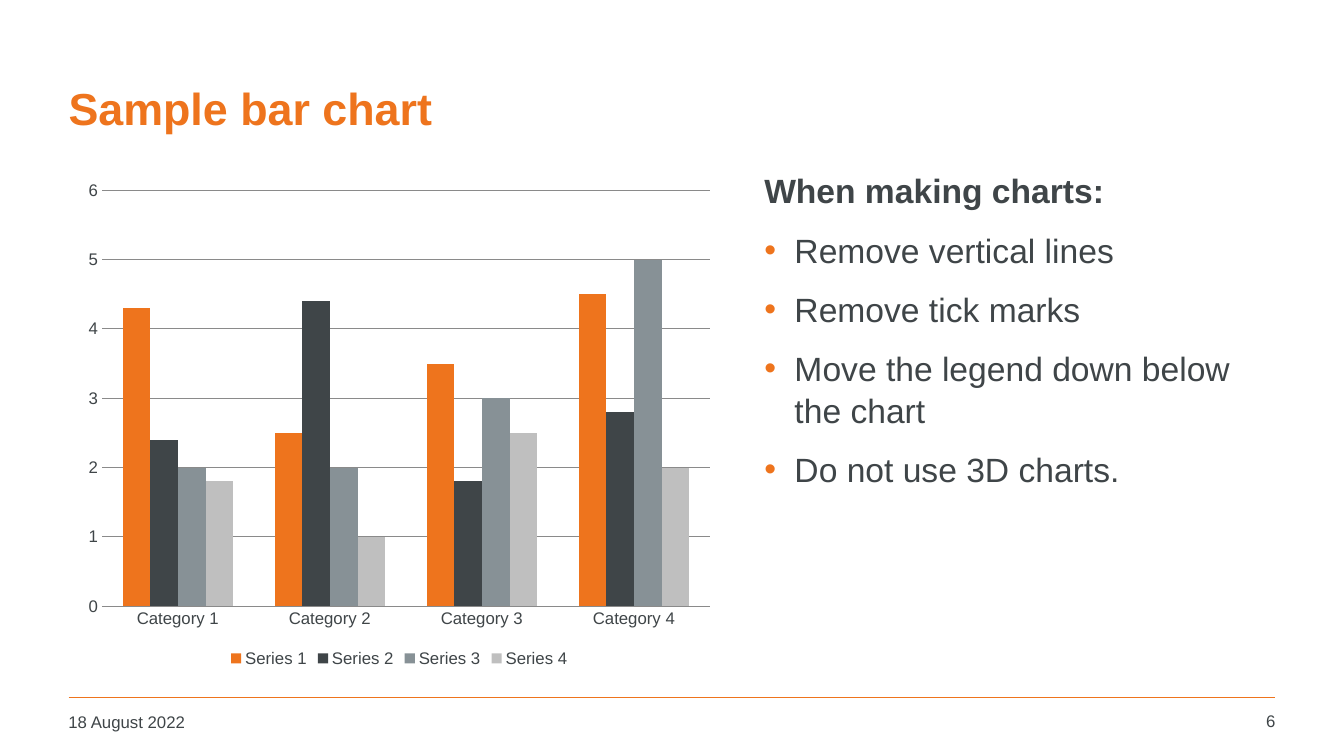
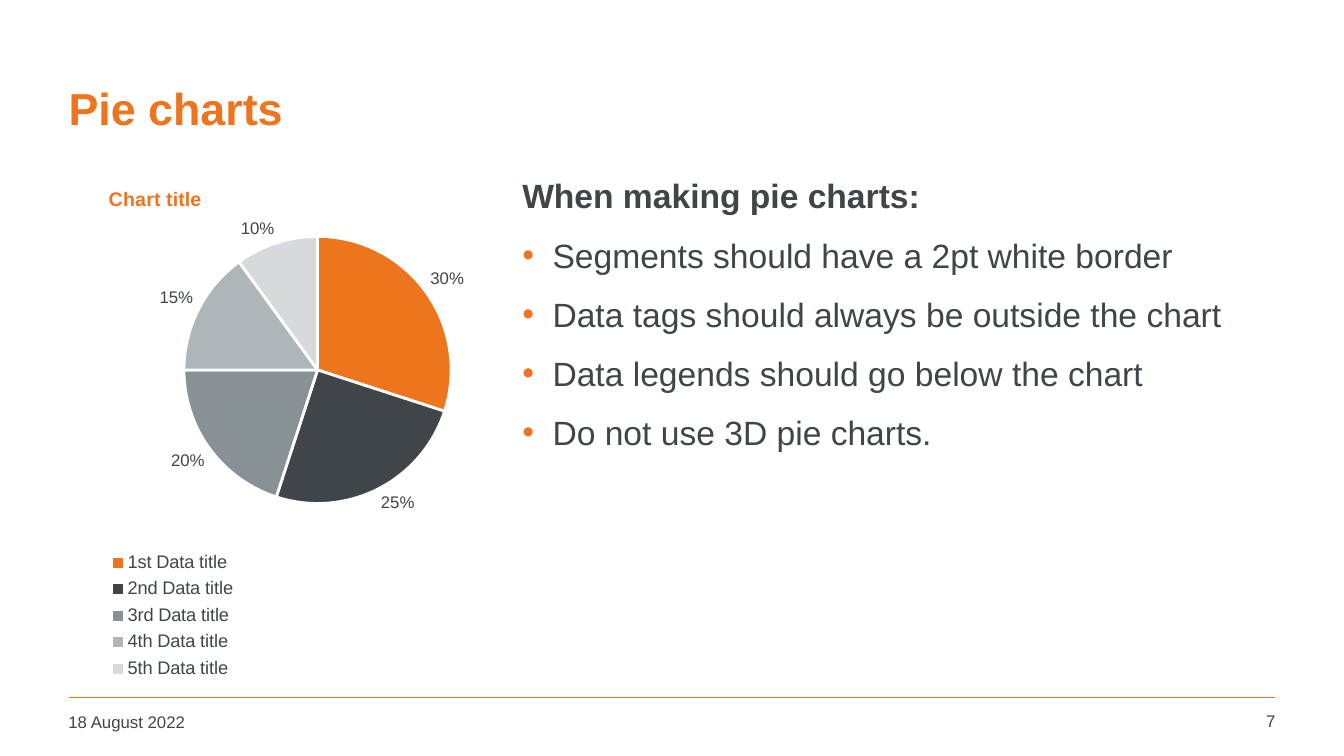
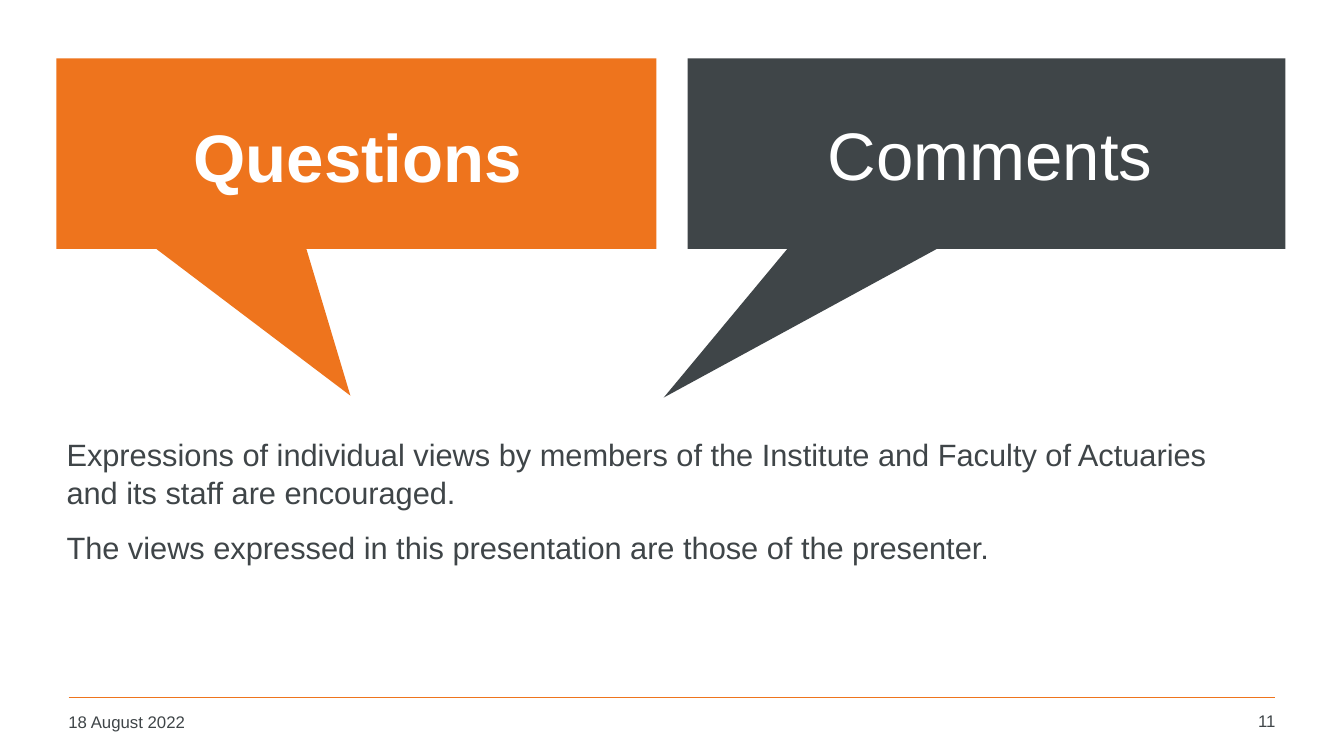
from lxml.etree import SubElement
from pptx import Presentation
from pptx.chart.data import CategoryChartData
from pptx.dml.color import RGBColor
from pptx.enum.chart import XL_CHART_TYPE as ChartType
from pptx.enum.chart import XL_LABEL_POSITION as LabelPosition
from pptx.enum.chart import XL_LEGEND_POSITION as LegendPosition
from pptx.enum.chart import XL_TICK_MARK as TickMark
from pptx.enum.shapes import MSO_CONNECTOR as Connector
from pptx.enum.shapes import MSO_SHAPE as Shape
from pptx.enum.text import MSO_ANCHOR as Anchor
from pptx.enum.text import MSO_AUTO_SIZE as AutoSize
from pptx.enum.text import PP_ALIGN as Align
from pptx.oxml.ns import qn
from pptx.util import Inches, Pt

COLORS = {
    "orange": "EE741D",
    "charcoal": "3F4548",
    "slate": "879196",
    "mist": "AFB6B9",
    "pale": "D7DADC",
    "silver": "BFBFBF",
    "grid": "8A8A8A",
    "white": "FFFFFF",
}
DATE = "18 August 2022"
TITLE_BOX = (0.58, 0.44, 12.09, 1.25)
CALLOUT_TOP, CALLOUT_HEIGHT = 0.58, 1.89
INDENT = Inches(0.3)


def rgb(name):
    return RGBColor.from_string(COLORS[name])


def inches(box):
    return [Inches(length) for length in box]


def apply(target, **values):
    for name, value in values.items():
        setattr(target, name, value)


def style(font, size, color="charcoal", bold=False):
    apply(font, name="Arial", size=Pt(size), bold=bold)
    font.color.rgb = rgb(color)


def move(shape, box):
    for name, length in zip(("left", "top", "width", "height"), box):
        setattr(shape, name, Inches(length))


def write(shape, text, size, color="charcoal", bold=False, align=Align.LEFT, anchor=Anchor.TOP):
    frame = shape.text_frame
    apply(frame, word_wrap=True, auto_size=AutoSize.NONE, vertical_anchor=anchor)
    paragraph = frame.paragraphs[0]
    paragraph.alignment = align
    run = paragraph.add_run()
    run.text = text
    style(run.font, size, color, bold)


def set_bullet(paragraph, bulleted):
    properties = paragraph._p.get_or_add_pPr()
    properties.set("marL", str(INDENT if bulleted else 0))
    properties.set("indent", str(-INDENT if bulleted else 0))
    if bulleted:
        tint = SubElement(properties, qn("a:buClr"))
        SubElement(tint, qn("a:srgbClr"), val=COLORS["orange"])
        SubElement(properties, qn("a:buFont"), typeface="Arial")
        SubElement(properties, qn("a:buChar"), char="•")
    else:
        SubElement(properties, qn("a:buNone"))


def fill_body(slide, box, size, plain=(), bullets=(), bold=False):
    body = slide.placeholders[1]
    move(body, box)
    frame = body.text_frame
    apply(frame, word_wrap=True, auto_size=AutoSize.NONE, vertical_anchor=Anchor.TOP)
    lines = [(text, False) for text in plain] + [(text, True) for text in bullets]
    for position, (text, bulleted) in enumerate(lines):
        paragraph = frame.add_paragraph() if position else frame.paragraphs[0]
        set_bullet(paragraph, bulleted)
        apply(paragraph, line_spacing=1.05, space_before=Pt(size / 2 if position else 0))
        run = paragraph.add_run()
        run.text = text
        style(run.font, size, bold=bold and not bulleted)


def add_footer(slide, number):
    rule = slide.shapes.add_connector(Connector.STRAIGHT, *inches((0.68, 6.92, 12.65, 6.92)))
    rule.line.color.rgb = rgb("orange")
    rule.line.width = Pt(1)
    SubElement(rule.element.spPr, qn("a:effectLst"))
    write(slide.shapes.add_textbox(*inches((0.58, 7.01, 2.94, 0.36))), DATE, 12)
    page = slide.shapes.add_textbox(*inches((11.81, 7, 0.94, 0.37)))
    write(page, str(number), 12, align=Align.RIGHT)


def start_slide(deck, number, title, box=TITLE_BOX, **title_format):
    slide = deck.slides.add_slide(deck.slide_layouts[1])
    move(slide.shapes.title, box)
    title_style = {"size": 32, "color": "orange", "bold": True, "anchor": Anchor.MIDDLE}
    write(slide.shapes.title, title, **{**title_style, **title_format})
    add_footer(slide, number)
    return slide


def add_chart(slide, kind, box, categories, series, legend_at, legend_size):
    data = CategoryChartData()
    data.categories = categories
    for name, values in series:
        data.add_series(name, values)
    chart = slide.shapes.add_chart(kind, *inches(box), data).chart
    style(chart.font, 12)
    chart.has_legend = True
    apply(chart.legend, position=legend_at, include_in_layout=False)
    style(chart.legend.font, legend_size)
    return chart


def set_layout(part, inner=False, **fractions):
    for old in part.findall(qn("c:layout")):
        part.remove(old)
    layout = part.makeelement(qn("c:layout"))
    overlay = part.find(qn("c:overlay"))
    if overlay is None:
        part.insert(0, layout)
    else:
        overlay.addprevious(layout)
    manual = SubElement(layout, qn("c:manualLayout"))
    if inner:
        SubElement(manual, qn("c:layoutTarget"), val="inner")
    for edge in "xy":
        SubElement(manual, qn(f"c:{edge}Mode"), val="edge")
    for side, fraction in fractions.items():
        SubElement(manual, qn(f"c:{side}"), val=str(fraction))


def add_bar_chart(slide, box):
    series = {
        "Series 1": ((4.3, 2.5, 3.5, 4.5), "orange"),
        "Series 2": ((2.4, 4.4, 1.8, 2.8), "charcoal"),
        "Series 3": ((2, 2, 3, 5), "slate"),
        "Series 4": ((1.8, 1, 2.5, 2), "silver"),
    }
    chart = add_chart(
        slide, ChartType.COLUMN_CLUSTERED, box,
        [f"Category {n}" for n in range(1, 5)],
        [(name, values) for name, (values, _) in series.items()],
        LegendPosition.BOTTOM, 12,
    )
    chart.has_title = False
    plot = chart.plots[0]
    apply(plot, gap_width=150, overlap=0, vary_by_categories=False)
    for bars, (_, color) in zip(plot.series, series.values()):
        bars.format.fill.solid()
        bars.format.fill.fore_color.rgb = rgb(color)
    for axis in (chart.category_axis, chart.value_axis):
        apply(axis, major_tick_mark=TickMark.NONE, minor_tick_mark=TickMark.NONE)
        style(axis.tick_labels.font, 12)
    scale = chart.value_axis
    apply(scale, minimum_scale=0, maximum_scale=6, major_unit=1, has_major_gridlines=True)
    scale.format.line.fill.background()
    for line in (scale.major_gridlines.format.line, chart.category_axis.format.line):
        line.color.rgb = rgb("grid")
        line.width = Pt(0.75)


def add_pie_chart(slide, box):
    chart = add_chart(
        slide, ChartType.PIE, box,
        [f"{rank} Data title" for rank in ("1st", "2nd", "3rd", "4th", "5th")],
        [("Series 1", (30, 25, 20, 15, 10))],
        LegendPosition.RIGHT, 13,
    )
    chart.has_title = True
    heading = chart.chart_title.text_frame.paragraphs[0].add_run()
    heading.text = "Chart title"
    style(heading.font, 14, "orange", True)
    plot = chart.plots[0]
    plot.vary_by_categories = True
    for position, color in enumerate(("orange", "charcoal", "slate", "mist", "pale")):
        segment = plot.series[0].points[position].format
        segment.fill.solid()
        segment.fill.fore_color.rgb = rgb(color)
        segment.line.color.rgb = rgb("white")
        segment.line.width = Pt(2)
    plot.has_data_labels = True
    labels = plot.data_labels
    apply(labels, show_percentage=True, show_value=False, number_format="0%",
          number_format_is_linked=False, position=LabelPosition.OUTSIDE_END)
    style(labels.font, 12)
    root = chart.element
    set_layout(root.find(".//" + qn("c:title")), x=0.02, y=0.02)
    set_layout(root.find(".//" + qn("c:plotArea")), True, x=0.11, y=0.12, w=0.51, h=0.5)
    set_layout(root.find(".//" + qn("c:legend")), x=0.02, y=0.7, w=0.22, h=0.26)


def add_callout(slide, left, width, color, tail):
    box = (left, CALLOUT_TOP, width, CALLOUT_HEIGHT)
    callout = slide.shapes.add_shape(Shape.RECTANGULAR_CALLOUT, *inches(box))
    for position, offset in enumerate(tail):
        callout.adjustments[position] = offset
    callout.shadow.inherit = False
    callout.fill.solid()
    callout.fill.fore_color.rgb = rgb(color)
    callout.line.fill.background()


def bar_slide(deck):
    slide = start_slide(deck, 6, "Sample bar chart")
    add_bar_chart(slide, (0.75, 1.7, 6.42, 4.96))
    fill_body(slide, (7.48, 1.62, 5.27, 5.07), 24, ["When making charts:"], [
        "Remove vertical lines",
        "Remove tick marks",
        "Move the legend down below the chart",
        "Do not use 3D charts.",
    ], bold=True)


def pie_slide(deck):
    slide = start_slide(deck, 7, "Pie charts")
    add_pie_chart(slide, (0.92, 1.71, 6.11, 5.3))
    fill_body(slide, (5.08, 1.67, 7.58, 5.07), 24, ["When making pie charts:"], [
        "Segments should have a 2pt white border",
        "Data tags should always be outside the chart",
        "Data legends should go below the chart",
        "Do not use 3D pie charts.",
    ], bold=True)
    slide.shapes.element.append(slide.placeholders[1].element)


def closing_slide(deck):
    centred = {"size": 48, "color": "white", "align": Align.CENTER}
    slide = start_slide(deck, 11, "Questions", (0.83, 0.92, 5.44, 1.25), **centred)
    fill_body(slide, (0.56, 4.25, 12.02, 2.58), 22, [
        "Expressions of individual views by members of the Institute and Faculty of "
        "Actuaries and its staff are encouraged.",
        "The views expressed in this presentation are those of the presenter.",
    ])
    add_callout(slide, 0.56, 5.95, "orange", (-0.01, 1.27))
    add_callout(slide, 6.82, 5.93, "charcoal", (-0.54, 1.28))
    slide.shapes.element.append(slide.shapes.title.element)
    comments = slide.shapes.add_textbox(*inches((7.06, 0.9, 5.52, 1.25)))
    write(comments, "Comments", anchor=Anchor.MIDDLE, **centred)


def main():
    deck = Presentation()
    apply(deck, slide_width=Inches(13.33), slide_height=Inches(7.5))
    for build in (bar_slide, pie_slide, closing_slide):
        build(deck)
    deck.save("out.pptx")


if __name__ == "__main__":
    main()
